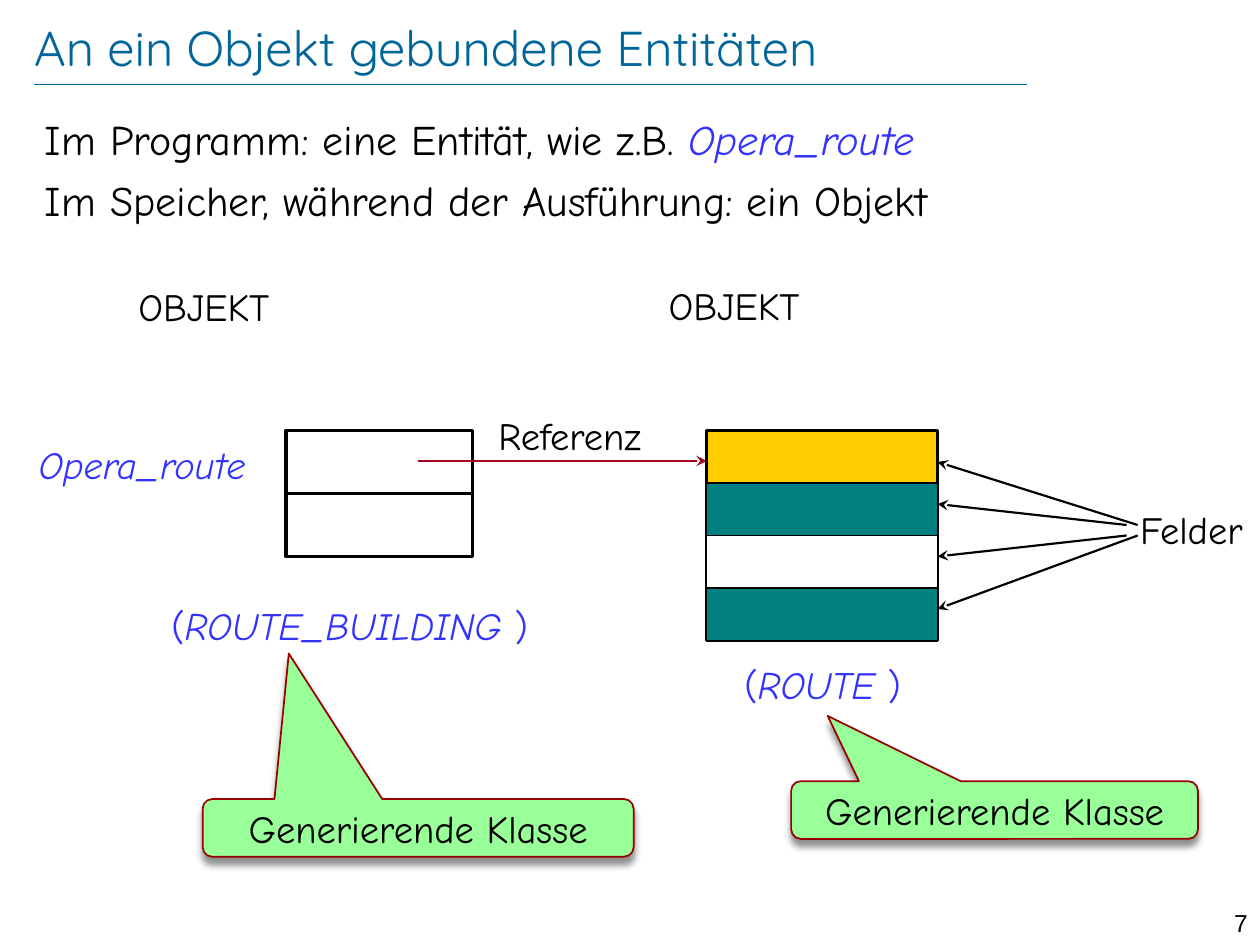
from lxml import etree
from pptx import Presentation
from pptx.dml.color import RGBColor
from pptx.enum.shapes import MSO_CONNECTOR, MSO_SHAPE
from pptx.enum.text import MSO_ANCHOR, PP_ALIGN
from pptx.oxml import parse_xml
from pptx.oxml.ns import nsdecls, qn
from pptx.util import Inches, Pt

LEFT, CENTER, RIGHT = PP_ALIGN.LEFT, PP_ALIGN.CENTER, PP_ALIGN.RIGHT
MIDDLE = MSO_ANCHOR.MIDDLE
RECTANGLE, CALLOUT = MSO_SHAPE.RECTANGLE, MSO_SHAPE.ROUNDED_RECTANGULAR_CALLOUT
STRAIGHT = MSO_CONNECTOR.STRAIGHT
color = RGBColor.from_string
BLACK, WHITE, BLUE, TITLE_BLUE = "000000", "FFFFFF", "3333FF", "006699"
YELLOW, TEAL, RED = "FFCC00", "008080", "A50021"
GREEN, DARK_RED = "99FF99", "990000"

prs = Presentation()
prs.slide_width, prs.slide_height = Inches(10), Inches(7.5)
slide = prs.slides.add_slide(prs.slide_layouts[5])
shapes = slide.shapes
CELL = prs.slide_width / 24  # 24 columns by 18 rows of square cells


def grid(*cells):
    """Convert columns and rows to slide lengths."""
    return [round(cell * CELL) for cell in cells]


def write(paragraph, parts, size, font="Comic Neue", align=LEFT):
    """Fill a paragraph with (text, colour, italic) parts."""
    paragraph.alignment = align
    for text, ink, italic in parts:
        run = paragraph.add_run()
        run.text = text
        run.font.name, run.font.size = font, Pt(size)
        run.font.color.rgb, run.font.italic = color(ink), italic


# Title and body
title = shapes.title
title.left, title.top, title.width, title.height = grid(0.65, 0.31, 20.86, 1.15)
heading = title.text_frame
heading.margin_left = heading.margin_right = heading.margin_top = heading.margin_bottom = 0
heading.vertical_anchor = MIDDLE
write(heading.paragraphs[0], [("An ein Objekt gebundene Entitäten", TITLE_BLUE, False)],
      28, "Quicksand")

body = shapes.add_textbox(*grid(0.62, 2.04, 22.1, 2.6)).text_frame
body.word_wrap = True
write(body.paragraphs[0], [("Im Programm: eine Entität, wie z.B. ", BLACK, False),
                           ("Opera_route", BLUE, True)], 24)
memory = body.add_paragraph()
memory.space_before = Pt(6)
write(memory, [("Im Speicher, während der Ausführung: ein Objekt", BLACK, False)], 24)

# Objects: left, top, width, height, fill, line width
boxes = [(5.45, 8.2 + 1.2 * row, 3.55, 1.2, None, 2) for row in range(2)]
boxes.append((13.46, 8.2, 4.4, 4, YELLOW, 2))
boxes += [(13.46, 8.2 + row, 4.4, 1, fill, 0.75)
          for row, fill in enumerate([TEAL, WHITE, TEAL], 1)]
for *place, fill, width in boxes:
    box = shapes.add_shape(RECTANGLE, *grid(*place))
    box.shadow.inherit = False
    if fill:
        box.fill.solid()
        box.fill.fore_color.rgb = color(fill)
    else:
        box.fill.background()
    box.line.color.rgb, box.line.width = color(BLACK), Pt(width)

# Title rule, reference and field arrows: ends, colour, width, arrowhead
lines = [((0.65, 1.61, 19.56, 1.61), TITLE_BLUE, 0.25, False),
         ((7.97, 8.78, 13.46, 8.78), RED, 1.5, True)]
lines += [((*start, 17.86, end), BLACK, 1.25, True)
          for start, end in [((21.67, 10), 8.8), ((21.46, 10), 9.6),
                             ((21.46, 10.2), 10.6), ((21.67, 10.2), 11.6)]]
for ends, ink, width, arrow in lines:
    line = shapes.add_connector(STRAIGHT, *grid(*ends))
    line.line.color.rgb, line.line.width = color(ink), Pt(width)
    if arrow:
        etree.SubElement(line.line._get_or_add_ln(), qn("a:tailEnd"), type="stealth")
    etree.SubElement(line._element.spPr, qn("a:effectLst"))

# Labels: left, top, width, alignment, parts
labels = [
    (2.4, 5.28, 3.84, LEFT, [("OBJEKT", BLACK, False)]),
    (12.5, 5.26, 3.84, LEFT, [("OBJEKT", BLACK, False)]),
    (0.5, 8.28, 4.92, LEFT, [("Opera_route", BLUE, True)]),
    (9.26, 7.73, 4.46, LEFT, [("Referenz", BLACK, False)]),
    (21.48, 9.53, 2.52, LEFT, [("Felder", BLACK, False)]),
]
labels += [(left, top, width, CENTER,
            [("(", BLUE, False), (name + " ", BLUE, True), (")", BLUE, False)])
           for left, top, width, name in [(2.28, 11.35, 8.76, "ROUTE_BUILDING"),
                                          (13.44, 12.48, 4.46, "ROUTE")]]
for left, top, width, align, parts in labels:
    label = shapes.add_textbox(*grid(left, top, width, 1.13)).text_frame
    label.word_wrap = True
    write(label.paragraphs[0], parts, 22, align=align)

# Callouts: left, top, width, pointer offset
for left, top, width, pointer in [(15.07, 14.88, 7.75, (-0.41, -1.63)),
                                  (3.86, 15.22, 8.21, (-0.3, -3.02))]:
    callout = shapes.add_shape(CALLOUT, *grid(left, top, width, 1.1))
    callout.adjustments[0], callout.adjustments[1] = pointer
    callout.fill.solid()
    callout.fill.fore_color.rgb = color(GREEN)
    callout.line.color.rgb, callout.line.width = color(DARK_RED), Pt(1)
    callout._element.spPr.append(parse_xml(
        f'<a:effectLst {nsdecls("a")}>'
        f'<a:outerShdw blurRad="{Pt(4)}" dist="{Pt(4)}" dir="5400000" rotWithShape="0">'
        f'<a:srgbClr val="{BLACK}"><a:alpha val="43000"/></a:srgbClr>'
        '</a:outerShdw></a:effectLst>'))
    caption = callout.text_frame
    caption.margin_left = caption.margin_right = 0
    caption.vertical_anchor = MIDDLE
    write(caption.paragraphs[0], [("Generierende Klasse", BLACK, False)], 22, align=CENTER)

page_number = shapes.add_textbox(*grid(22.68, 17.18, 1.32, 0.58)).text_frame
page_number.word_wrap = True
write(page_number.paragraphs[0], [("7", BLACK, False)], 14, "Arial", RIGHT)

prs.save("out.pptx")
